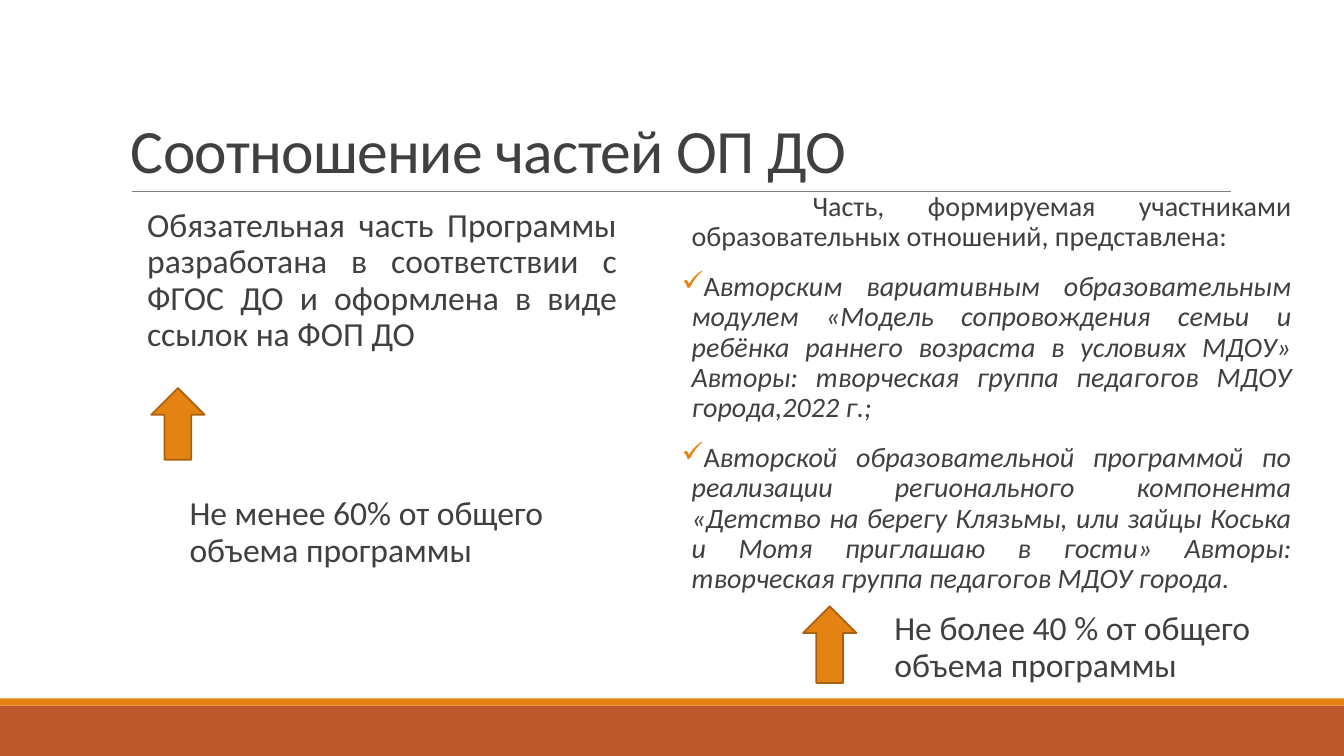
"""Build a slide comparing the two parts of a preschool programme."""
import dataclasses

import pptx
import pptx.dml.color
import pptx.enum.shapes
import pptx.enum.text
import pptx.oxml.ns
import pptx.util
from lxml import etree

Inches = pptx.util.Inches
Pt = pptx.util.Pt
Shape = pptx.enum.shapes.MSO_SHAPE
Align = pptx.enum.text.PP_ALIGN
Anchor = pptx.enum.text.MSO_ANCHOR
qn = pptx.oxml.ns.qn


@dataclasses.dataclass(frozen=True)
class Theme:
    """Colours, font and type sizes of the slide."""
    ink: str = "404040"
    rust: str = "BD582C"
    amber: str = "E48312"
    edge: str = "A9610D"
    rule: str = "808080"
    font: str = "Calibri"
    head: int = 44
    body: int = 24
    small: int = 20


THEME = Theme()


def tint(code):
    """Return a colour from its hex code."""
    return pptx.dml.color.RGBColor.from_string(code)


def place(box):
    """Turn a box in inches into lengths."""
    return [Inches(n) for n in box]


def mark(para, sign):
    """Give a paragraph a coloured bullet."""
    props = para._p.get_or_add_pPr()
    hue = etree.SubElement(props, qn("a:buClr"))
    etree.SubElement(hue, qn("a:srgbClr"), val=THEME.amber)
    etree.SubElement(props, qn("a:buChar"), char=sign)


def write(slide, box, paras, size=THEME.body, align=Align.LEFT, anchor=Anchor.TOP,
          side=0, left=0.1, space=0.9, before=12, after=2, track=0):
    """Write paragraphs, each a tuple of runs, first indent and bullet."""
    frame = slide.shapes.add_textbox(*place(box)).text_frame
    frame.word_wrap = True
    frame.vertical_anchor = anchor
    frame.margin_left = frame.margin_right = Inches(side)
    frame.margin_top = frame.margin_bottom = Inches(0.05)
    for num, (runs, first, sign) in enumerate(paras):
        para = frame.add_paragraph() if num else frame.paragraphs[0]
        para.alignment = align
        para.line_spacing = space
        para.space_before, para.space_after = Pt(before), Pt(after)
        props = para._p.get_or_add_pPr()
        props.set("marL", str(Inches(left)))
        props.set("indent", str(Inches(first)))
        if sign:
            mark(para, sign)
        for text, slant in runs:
            run = para.add_run()
            run.text = text
            run.font.name = THEME.font
            run.font.size = Pt(size)
            run.font.italic = slant
            run.font.color.rgb = tint(THEME.ink)
            if track:
                run._r.get_or_add_rPr().set("spc", str(track))


def plain(text, first=0):
    """Return one upright paragraph without a bullet."""
    return [(text, False)], first, None


def check(text):
    """Return a ticked paragraph, italic after its first letter."""
    return [(text[0], False), (text[1:], True)], -0.1, "✓"


def block(slide, kind, box, fill, edge=None, turn=0):
    """Draw a filled shape with an optional outline."""
    shape = slide.shapes.add_shape(kind, *place(box))
    shape.shadow.inherit = False
    shape.rotation = turn
    shape.fill.solid()
    shape.fill.fore_color.rgb = tint(fill)
    if edge:
        shape.line.color.rgb = tint(edge)
        shape.line.width = Pt(1.25)
    else:
        shape.line.fill.background()


def footer(slide, box):
    """Draw the base band with a thin stripe on top."""
    x, y, w, h = box
    block(slide, Shape.RECTANGLE, (x, y + 0.07, w, h - 0.07), THEME.rust)
    block(slide, Shape.RECTANGLE, (x, y, w, 0.07), THEME.amber)


def header(slide, box, text):
    """Write the title above a thin rule."""
    x, y, w, h = box
    base = y + h
    ends = place((x + 0.11, base, x + w + 0.01, base))
    line = slide.shapes.add_connector(pptx.enum.shapes.MSO_CONNECTOR.STRAIGHT, *ends)
    line.line.color.rgb = tint(THEME.rule)
    line.line.width = Pt(0.5)
    etree.SubElement(line._element.spPr, qn("a:effectLst"))
    write(slide, box, [plain(text)], size=THEME.head, anchor=Anchor.BOTTOM,
          side=0.1, left=0, space=0.85, before=0, after=0, track=-50)


def part(slide, box, paras, size, arrow, note, share):
    """Lay out one part: its text, up arrow and share, offset from the box."""
    x, y, w, h = box
    write(slide, box, paras, size=size, align=Align.JUSTIFY)
    dx, dy, length = arrow
    block(slide, Shape.RIGHT_ARROW, (x + dx, y + dy, length, 0.53),
          THEME.amber, THEME.edge, 270)
    dx, dy = note
    write(slide, (x + dx, y + dy, 4.17, 0.95), [plain(share)])


def main():
    """Build and save the slide."""
    deck = pptx.Presentation()
    deck.slide_width, deck.slide_height = Inches(13.33), Inches(7.5)
    slide = deck.slides.add_slide(deck.slide_layouts[6])
    footer(slide, (0, 6.93, 13.33, 0.57))
    header(slide, (1.2, 0.31, 11, 1.59), "Соотношение частей ОП ДО")
    part(slide, (1.36, 2.02, 4.76, 1.83), [
        plain("Обязательная часть Программы разработана в соответствии с "
              "ФГОС ДО и оформлена в виде ссылок на ФОП ДО"),
    ], THEME.body, (0.05, 1.92, 0.71), (0.42, 2.86),
        "Не менее 60% от общего объема программы")
    part(slide, (6.76, 1.86, 6.05, 4.08), [
        plain("Часть, формируемая участниками образовательных отношений, "
              "представлена:", first=1.2),
        check("Авторским вариативным образовательным модулем «Модель "
              "сопровождения семьи и ребёнка раннего возраста в условиях "
              "МДОУ» Авторы: творческая группа педагогов МДОУ города,2022 г.;"),
        check("Авторской образовательной программой по реализации "
              "регионального компонента «Детство на берегу Клязьмы, или зайцы "
              "Коська и Мотя приглашаю в гости» Авторы: творческая группа "
              "педагогов МДОУ города."),
    ], THEME.small, (1.09, 4.27, 0.76), (2.01, 4.16),
        "Не более 40 % от общего объема программы")
    deck.save("out.pptx")


if __name__ == "__main__":
    main()
